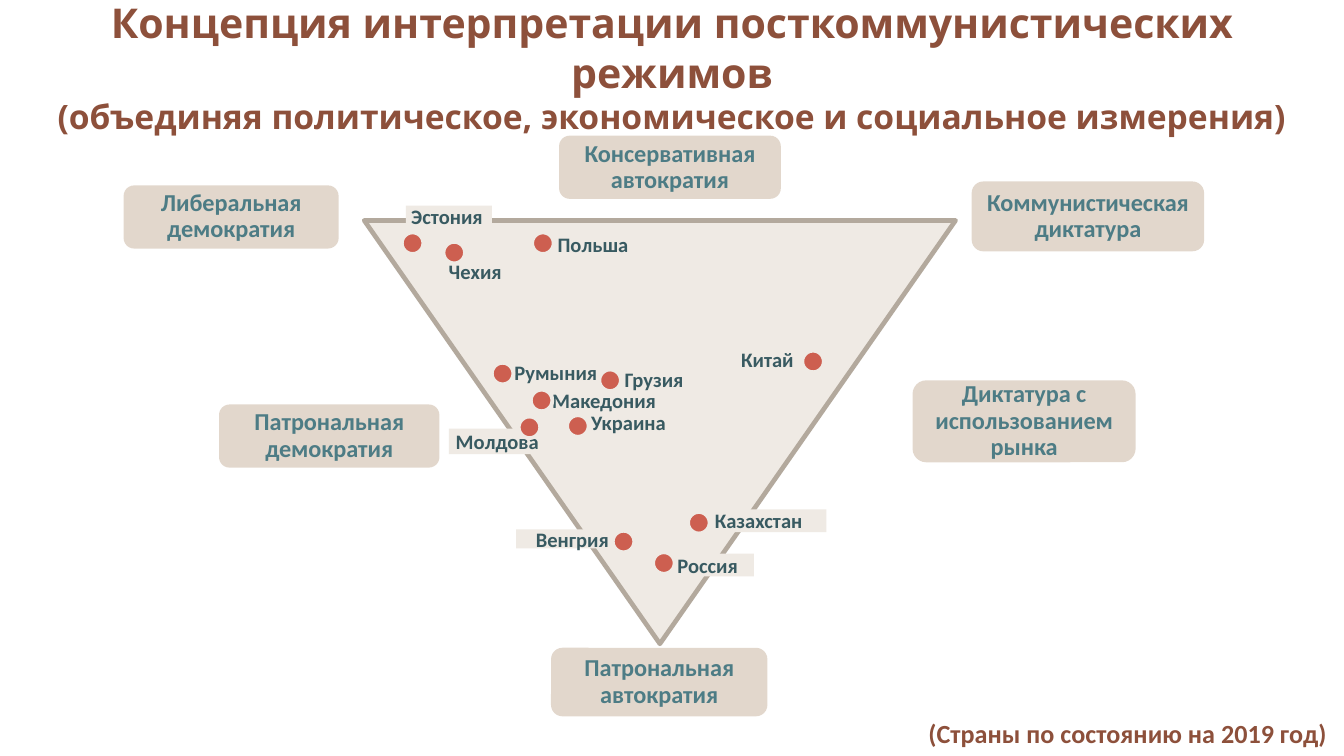
import pptx
import pptx.dml.color
import pptx.enum.shapes
import pptx.enum.text
import pptx.oxml.ns
import pptx.util
from lxml import etree

Inches = pptx.util.Inches
Pt = pptx.util.Pt
SHAPE = pptx.enum.shapes.MSO_SHAPE
ALIGN = pptx.enum.text.PP_ALIGN
qn = pptx.oxml.ns.qn

COLORS = {
    "title": "8D503B",
    "regime_text": "4D7C85",
    "regime_box": "C7B09A",
    "country_text": "385A61",
    "dot": "CD5F50",
    "triangle": "EFEAE4",
    "edge": "B3A99D",
}


def add_filled(kind, box, fill, edge=None, width=0):
    """Add a preset shape without shadow; no line unless edge is given."""
    shape = slide.shapes.add_shape(kind, *[Inches(v) for v in box])
    shape.shadow.inherit = False
    shape.fill.solid()
    shape.fill.fore_color.rgb = pptx.dml.color.RGBColor.from_string(COLORS[fill])
    if edge:
        shape.line.color.rgb = pptx.dml.color.RGBColor.from_string(COLORS[edge])
        shape.line.width = Pt(width)
    else:
        shape.line.fill.background()
    return shape


def write(shape, parts, color, font, align, inset=0.1, spacing=1.0, middle=True):
    """Write (text, size) parts as one paragraph, a line break between parts."""
    frame = shape.text_frame
    frame.word_wrap = True
    frame.margin_left = frame.margin_right = Inches(inset)
    anchor = pptx.enum.text.MSO_ANCHOR
    frame.vertical_anchor = anchor.MIDDLE if middle else anchor.TOP
    paragraph = frame.paragraphs[0]
    paragraph.alignment = align
    paragraph.line_spacing = spacing
    for number, (text, size) in enumerate(parts):
        if number:
            paragraph.add_line_break()
        run = paragraph.add_run()
        run.text = text
        run.font.name = font
        run.font.size = Pt(size)
        run.font.bold = True
        run.font.color.rgb = pptx.dml.color.RGBColor.from_string(COLORS[color])


presentation = pptx.Presentation()
presentation.slide_width = Inches(10)
presentation.slide_height = Inches(10 * 9 / 16)
slide = presentation.slides.add_slide(presentation.slide_layouts[6])

# Triangle pointing down
triangle = add_filled(SHAPE.ISOSCELES_TRIANGLE, (2.71, 1.64, 4.4, 3.15),
                      "triangle", "edge", 2.5)
triangle.rotation = 180
etree.SubElement(triangle.line._get_or_add_ln(), qn("a:round"))

# Regime types at the corners and sides
regimes = [
    ("Коммунистическая диктатура", (7.23, 1.35, 1.73, 0.52)),
    ("Либеральная демократия", (0.92, 1.38, 1.6, 0.47)),
    ("Патрональная автократия", (4.1, 4.82, 1.61, 0.51)),
    ("Консервативная автократия", (4.16, 1.01, 1.65, 0.47)),
    ("Диктатура с использованием рынка", (6.79, 2.83, 1.66, 0.61)),
    ("Патрональная демократия", (1.63, 3.01, 1.64, 0.47)),
]
for regime, box in regimes:
    regime_box = add_filled(SHAPE.ROUNDED_RECTANGLE, box, "regime_box")
    tint = regime_box._element.spPr.find(".//" + qn("a:srgbClr"))
    etree.SubElement(tint, qn("a:alpha"), val="50000")
    write(regime_box, [(regime, 13)], "regime_text", "Calibri", ALIGN.CENTER,
          inset=0.05, spacing=0.9)

# Title and date note
title = slide.shapes.add_textbox(Inches(0.12), 0, Inches(9.76), Inches(1))
write(title,
      [("Концепция интерпретации посткоммунистических режимов", 22),
       ("(объединяя политическое, экономическое и социальное измерения)", 18)],
      "title", "Open Sans", ALIGN.CENTER)
date_note = slide.shapes.add_textbox(Inches(6.81), Inches(5.29), Inches(3.19), Inches(0.34))
write(date_note, [("(Страны по состоянию на 2019 год)", 14)],
      "title", "Calibri", ALIGN.LEFT, middle=False)

# Countries: label box, alignment, side inset, has background, dot's left and top
countries = [
    ("Китай", (5.37, 2.59, 0.68, 0.17), ALIGN.CENTER, 0.1, False, (5.97, 2.61)),
    ("Польша", (4.05, 1.73, 0.78, 0.18), ALIGN.LEFT, 0.1, False, (3.96, 1.73)),
    ("Эстония", (3.02, 1.53, 0.64, 0.16), ALIGN.LEFT, 0.04, True, (2.99, 1.73)),
    ("Румыния", (3.73, 2.71, 0.83, 0.12), ALIGN.LEFT, 0.1, False, (3.66, 2.7)),
    ("Македония", (4.01, 2.85, 0.99, 0.26), ALIGN.LEFT, 0.1, False, (3.95, 2.9)),
    ("Грузия", (4.55, 2.75, 0.73, 0.14), ALIGN.LEFT, 0.1, False, (4.46, 2.75)),
    ("Украина", (4.3, 3.04, 0.82, 0.21), ALIGN.LEFT, 0.1, False, (4.22, 3.09)),
    ("Венгрия", (3.84, 3.94, 0.79, 0.14), ALIGN.RIGHT, 0.1, True, (4.56, 3.95)),
    ("Россия", (4.92, 4.12, 0.69, 0.17), ALIGN.CENTER, 0.1, True, (4.86, 4.11)),
    ("Казахстан", (5.22, 3.79, 0.93, 0.17), ALIGN.LEFT, 0.1, True, (5.12, 3.81)),
    ("Чехия", (3.24, 1.9, 1.18, 0.24), ALIGN.LEFT, 0.1, False, (3.3, 1.8)),
    ("Молдова", (3.34, 3.19, 0.71, 0.19), ALIGN.RIGHT, 0.04, True, (3.86, 3.1)),
]
for country, box, align, inset, has_background, _ in countries:
    if has_background:
        label = add_filled(SHAPE.RECTANGLE, box, "triangle")
    else:
        label = slide.shapes.add_textbox(*[Inches(v) for v in box])
    write(label, [(country, 11)], "country_text", "Calibri", align, inset)

for *_, (left, top) in countries:
    add_filled(SHAPE.OVAL, (left, top, 0.16, 0.16), "dot", "triangle", 2)

presentation.save("out.pptx")
